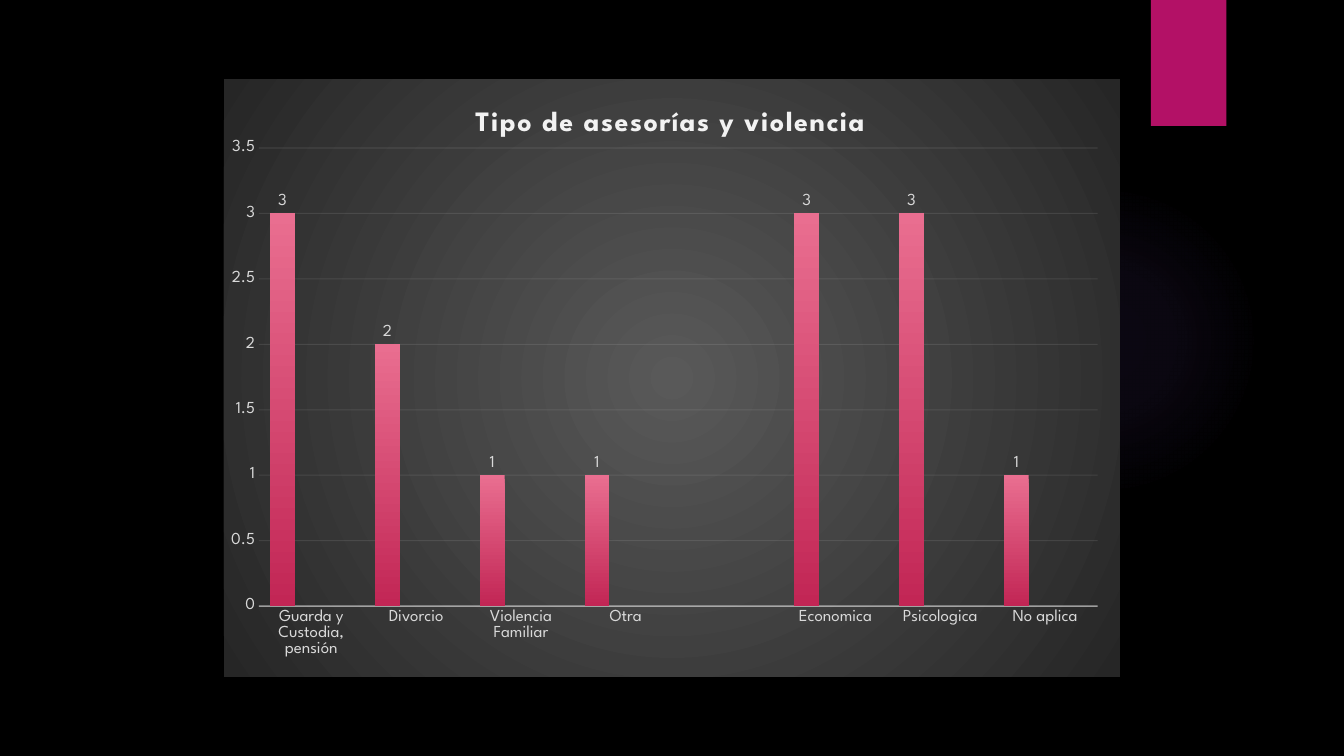
from pptx import Presentation
from pptx import util as u
from pptx.chart.data import CategoryChartData
from pptx.dml.color import RGBColor
from pptx.enum import chart as ch, shapes
from pptx.oxml import parse_xml
from pptx.oxml.ns import nsdecls, qn
from lxml import etree

FONT = "League Spartan"
BLACK = RGBColor(0x00, 0x00, 0x00)
WHITE = RGBColor(0xFF, 0xFF, 0xFF)
MAGENTA = RGBColor(0xB3, 0x11, 0x66)
VIOLET = RGBColor(0x9B, 0x6B, 0xF2)
PALE = RGBColor(0xF2, 0xF2, 0xF2)
LABEL = RGBColor(0xD9, 0xD9, 0xD9)
PANEL = (RGBColor(0x59, 0x59, 0x59), RGBColor(0x26, 0x26, 0x26))
BARS = (
    (RGBColor(0xE9, 0x6E, 0x90), RGBColor(0xC2, 0x26, 0x55)),
    (RGBColor(0xEE, 0xAD, 0x6D), RGBColor(0xC9, 0x77, 0x21)),
    (RGBColor(0xDD, 0x6A, 0xD9), RGBColor(0xAE, 0x2E, 0xAA)),
)

CATEGORIES = ["Guarda y Custodia, pensión", "Divorcio", "Violencia Familiar",
              "Otra", "", "Economica", "Psicologica", "No aplica"]
COUNTS = [3, 2, 1, 1, None, 3, 3, 1]
EMPTY = [None] * len(CATEGORIES)
SMALL = {"name": FONT, "size": u.Pt(12)}


def assign(target, values):
    for name, value in values.items():
        setattr(target, name, value)


def gradient(stops, angle=None):
    """Gradient from (percent, colour, opacity) stops; circular without an angle."""
    marks = "".join(
        f'<a:gs pos="{pos * 1000}"><a:srgbClr val="{color}">'
        f'<a:alpha val="{alpha * 1000}"/></a:srgbClr></a:gs>'
        for pos, color, alpha in stops)
    if angle is None:
        course = ('<a:path path="circle"><a:fillToRect l="50000" t="50000" '
                  'r="50000" b="50000"/></a:path>')
    else:
        course = f'<a:lin ang="{angle * 60000}" scaled="0"/>'
    return parse_xml(f'<a:gradFill {nsdecls("a")} rotWithShape="1">'
                     f'<a:gsLst>{marks}</a:gsLst>{course}</a:gradFill>')


def place(parent, left, top, width=None, height=None):
    """Fill a chart layout element with fractions of the chart area."""
    layout = parent.find(qn("c:layout"))
    if layout is None:
        layout = etree.Element(qn("c:layout"))
        if parent.tag == qn("c:title"):
            parent.find(qn("c:tx")).addnext(layout)
        else:
            parent.insert(0, layout)
    for child in list(layout):
        layout.remove(child)
    manual = etree.SubElement(layout, qn("c:manualLayout"))
    entries = {"xMode": "edge", "yMode": "edge", "x": left, "y": top}
    if width:
        entries = {"layoutTarget": "inner", **entries, "w": width, "h": height}
    for name, value in entries.items():
        etree.SubElement(manual, qn(f"c:{name}"), val=str(value))


class SlideBuilder:
    def __init__(self, deck):
        self.page = deck.slides.add_slide(deck.slide_layouts[6])
        fill = self.page.background.fill
        fill.solid()
        fill.fore_color.rgb = BLACK

    def font(self, font, color, **values):
        assign(font, {**SMALL, "bold": False, **values})
        font.color.rgb = color

    def line(self, line, color, width, opacity):
        line.width = u.Pt(width)
        line.color.rgb = color
        mark = next(line._get_or_add_ln().iter(qn("a:srgbClr")))
        etree.SubElement(mark, qn("a:alpha"), val=str(opacity * 1000))

    def blend(self, fill, properties, paint):
        """Put a gradient where the plain fill of a shape or series stands."""
        fill.background()
        blank = properties.find(qn("a:noFill"))
        properties.replace(blank, paint)

    def shape(self, kind, left, top, width, height):
        shape = self.page.shapes.add_shape(
            kind, *map(u.Pt, (left, top, width, height)))
        shape.line.fill.background()
        shape.shadow.inherit = False
        return shape

    def glow(self, *frame):
        disc = self.shape(shapes.MSO_SHAPE.OVAL, *frame)
        stops = [(0, VIOLET, 7), (36, VIOLET, 6), (69, VIOLET, 0)]
        self.blend(disc.fill, disc._element.spPr, gradient(stops))

    def tab(self, *frame):
        tab = self.shape(shapes.MSO_SHAPE.RECTANGLE, *frame)
        tab.fill.solid()
        tab.fill.fore_color.rgb = MAGENTA
        effects = tab._element.spPr.find(qn("a:effectLst"))
        effects.append(parse_xml(
            f'<a:outerShdw {nsdecls("a")} blurRad="38100" dist="25400" '
            f'dir="5400000" rotWithShape="0"><a:srgbClr val="{BLACK}">'
            '<a:alpha val="45000"/></a:srgbClr></a:outerShdw>'))

    def column_chart(self, title, *frame):
        data = CategoryChartData()
        data.categories = CATEGORIES
        for number, values in enumerate((COUNTS, EMPTY, EMPTY), 1):
            data.add_series(f"Series {number}", values)
        chart = self.page.shapes.add_chart(
            ch.XL_CHART_TYPE.COLUMN_CLUSTERED, *map(u.Pt, frame), data).chart
        self.font(chart.font, WHITE, size=u.Pt(10))
        chart.has_legend = False
        self.chart_panel(chart)
        self.chart_title(chart, title)
        self.chart_axes(chart)
        self.chart_bars(chart.plots[0])
        place(chart._chartSpace.chart.plotArea, 0.039, 0.115, 0.936, 0.767)

    def chart_panel(self, chart):
        panel = parse_xml(f'<c:spPr {nsdecls("c", "a")}><a:ln><a:noFill/></a:ln></c:spPr>')
        panel.insert(0, gradient([(0, PANEL[0], 100), (100, PANEL[1], 100)]))
        chart._chartSpace.chart.addnext(panel)

    def chart_title(self, chart, title):
        frame = chart.chart_title.text_frame
        span = frame.paragraphs[0].add_run()
        span.text = title
        self.font(span.font, PALE, size=u.Pt(20), bold=True)
        span._r.get_or_add_rPr().set("spc", "100")
        chart.chart_title.include_in_layout = False
        place(chart.chart_title._element, 0.275, 0.04)

    def chart_axes(self, chart):
        for axis in (chart.category_axis, chart.value_axis):
            axis.major_tick_mark = axis.minor_tick_mark = ch.XL_TICK_MARK.NONE
            self.font(axis.tick_labels.font, LABEL)
        self.line(chart.category_axis.format.line, PALE, 1, 54)
        scale = chart.value_axis
        assign(scale, {"minimum_scale": 0, "maximum_scale": 3.5, "major_unit": 0.5,
                       "has_major_gridlines": True})
        scale.format.line.fill.background()
        self.line(scale.major_gridlines.format.line, PALE, 0.75, 10)

    def chart_bars(self, plot):
        assign(plot, {"gap_width": 90, "overlap": -16, "vary_by_categories": False})
        for series, (light, dark) in zip(plot.series, BARS):
            paint = gradient([(0, light, 100), (100, dark, 100)], 90)
            fill = series.format.fill
            self.blend(fill, series._element.get_or_add_spPr(), paint)
            labels = series.data_labels
            assign(labels, {"show_value": True,
                            "position": ch.XL_LABEL_POSITION.OUTSIDE_END})
            self.font(labels.font, LABEL)


def main():
    deck = Presentation()
    assign(deck, {"slide_width": u.Pt(960), "slide_height": u.Pt(540)})
    slide = SlideBuilder(deck)
    slide.glow(677.5, 131.8, 221.8, 221.8)
    slide.tab(822, 0, 54, 90)
    slide.column_chart("Tipo de asesorías y violencia", 160, 56.7, 640, 426.7)
    deck.save("out.pptx")


if __name__ == "__main__":
    main()
